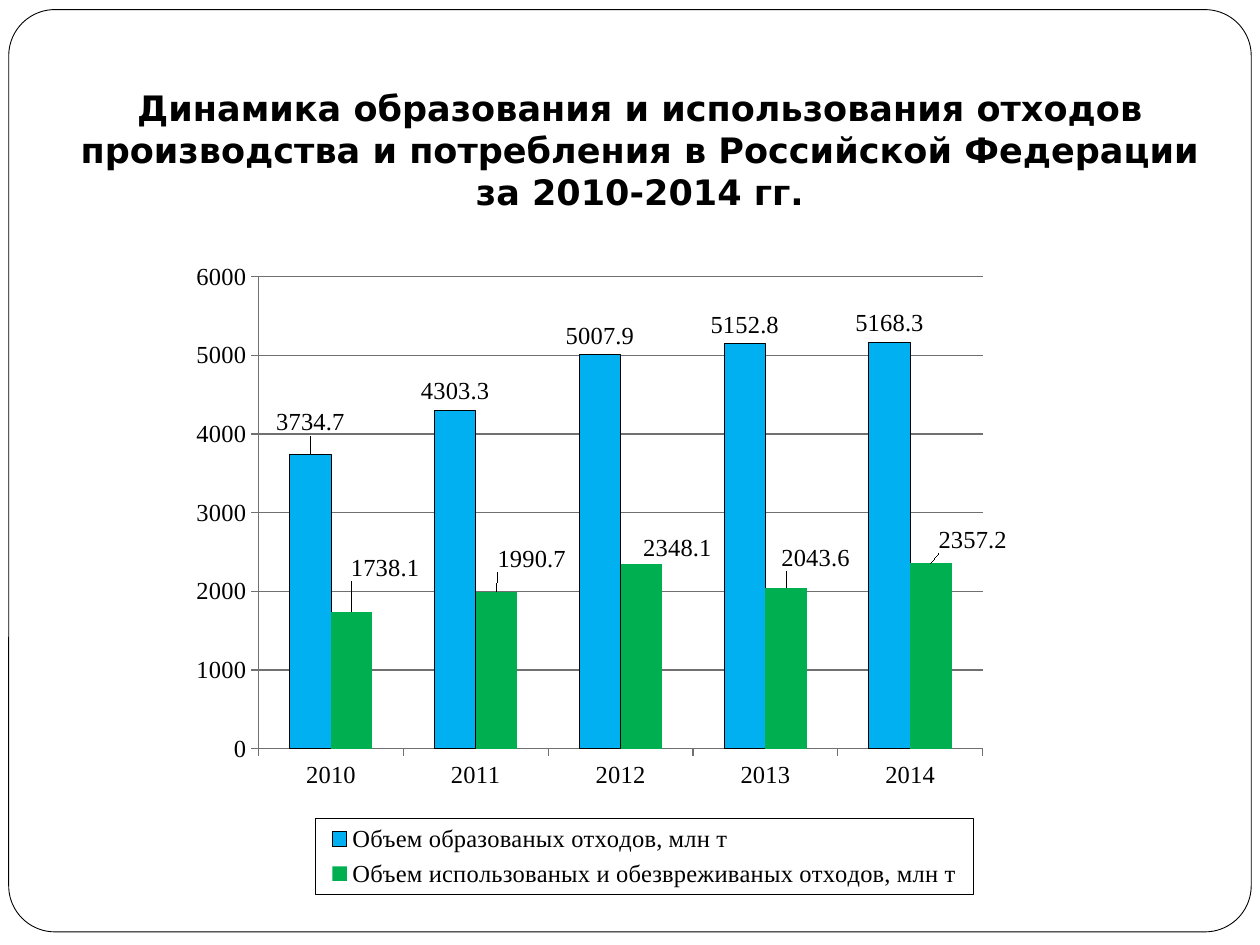
import pptx
import pptx.chart.data
import pptx.dml.color
import pptx.enum.chart
import pptx.enum.shapes
import pptx.enum.text
import pptx.oxml
import pptx.oxml.ns
import pptx.util

Pt = pptx.util.Pt
RGBColor = pptx.dml.color.RGBColor
xl = pptx.enum.chart

# Content
TITLE = ("Динамика образования и использования отходов производства "
         "и потребления в Российской Федерации за 2010-2014 гг.")
YEARS = ["2010", "2011", "2012", "2013", "2014"]
BLACK = RGBColor(0x00, 0x00, 0x00)
WHITE = RGBColor(0xFF, 0xFF, 0xFF)
GREY = RGBColor(0x70, 0x70, 0x70)
BLUE = RGBColor(0x00, 0xB0, 0xF0)
GREEN = RGBColor(0x00, 0xB0, 0x50)
# Label shifts are in percent of the chart's width and height, by year index
WASTE = [
    dict(name="Объем образованых отходов, млн т", color=BLUE, outline=BLACK,
         values=[3734.7, 4303.3, 5007.9, 5152.8, 5168.3],
         shifts={0: (0, -2)}),
    dict(name="Объем использованых и обезвреживаных отходов, млн т",
         color=GREEN, outline=None,
         values=[1738.1, 1990.7, 2348.1, 2043.6, 2357.2],
         shifts={0: (3.5, -3.7), 1: (3.7, -2.1), 2: (3.8, 0.4),
                 3: (3.1, -1.6), 4: (4.4, -0.7)}),
]
# Left, top, width, height as fractions of the chart
PLOT_AREA = (0.11, 0.09, 0.76, 0.68)
LEGEND_AREA = (0.17, 0.87, 0.69, 0.11)
TITLE_FONT, CHART_FONT = "DejaVu Sans", "Times New Roman"


def layout_xml(**parts):
    """A manual layout; parts are its settings in schema order."""
    settings = "".join(f'<c:{tag} val="{value}"/>' for tag, value in parts.items())
    return pptx.oxml.parse_xml(
        f'<c:layout {pptx.oxml.ns.nsdecls("c")}><c:manualLayout>'
        f'{settings}</c:manualLayout></c:layout>')


def put_layout(parent, layout, after=None):
    """Replace the layout of a chart part, behind the child named in after."""
    for old in parent.xpath("c:layout"):
        parent.remove(old)
    if after:
        parent.xpath(after)[0].addnext(layout)
    else:
        parent.insert(0, layout)


def area_layout(area, **first):
    return layout_xml(**first, xMode="edge", yMode="edge",
                      **dict(zip("xywh", area)))


def set_font(font, size):
    font.name, font.size, font.bold = CHART_FONT, Pt(size), False
    font.color.rgb = BLACK


presentation = pptx.Presentation()
presentation.slide_width, presentation.slide_height = Pt(720), Pt(540)
slide = presentation.slides.add_slide(presentation.slide_layouts[5])
title = slide.shapes.title

# Rounded frame, behind everything
frame = slide.shapes.add_shape(pptx.enum.shapes.MSO_SHAPE.ROUNDED_RECTANGLE,
                               Pt(5), Pt(5.5), Pt(710), Pt(527))
frame.adjustments[0] = 0.05
frame.shadow.inherit = False
frame.fill.solid()
frame.fill.fore_color.rgb = WHITE
frame.line.color.rgb = BLACK
frame.line.width = Pt(0.5)
title.element.addprevious(frame.element)

# Title
title.left, title.top, title.width, title.height = Pt(42.5), Pt(49), Pt(646.5), Pt(72.7)
text = title.text_frame
text.margin_left = text.margin_top = text.margin_right = text.margin_bottom = 0
text.word_wrap = True
text.auto_size = pptx.enum.text.MSO_AUTO_SIZE.SHAPE_TO_FIT_TEXT
text.vertical_anchor = pptx.enum.text.MSO_ANCHOR.MIDDLE
heading = text.paragraphs[0]
heading.alignment = pptx.enum.text.PP_ALIGN.CENTER
run = heading.add_run()
run.text = TITLE
run.font.name, run.font.size, run.font.bold = TITLE_FONT, Pt(20), True
run.font.color.rgb = BLACK

# Chart
data = pptx.chart.data.CategoryChartData()
data.categories = YEARS
for waste in WASTE:
    data.add_series(waste["name"], waste["values"])
chart = slide.shapes.add_chart(xl.XL_CHART_TYPE.COLUMN_CLUSTERED, Pt(88), Pt(122.4),
                               Pt(544.3), Pt(396.7), data).chart
chart.has_title = False
set_font(chart.font, 10)
plot = chart.plots[0]
plot.gap_width, plot.overlap, plot.vary_by_categories = 150, 0, False

# Axes
for axis in (chart.category_axis, chart.value_axis):
    set_font(axis.tick_labels.font, 14)
    axis.major_tick_mark = xl.XL_TICK_MARK.OUTSIDE
    axis.format.line.color.rgb = GREY
    axis.format.line.width = Pt(0.75)
amounts = chart.value_axis
amounts.minimum_scale, amounts.maximum_scale, amounts.major_unit = 0, 6000, 1000
amounts.has_major_gridlines = True
amounts.major_gridlines.format.line.color.rgb = GREY
amounts.major_gridlines.format.line.width = Pt(0.75)

# Columns and their labels
for waste, columns in zip(WASTE, plot.series):
    columns.format.fill.solid()
    columns.format.fill.fore_color.rgb = waste["color"]
    if waste["outline"] is None:
        columns.format.line.fill.background()
    else:
        columns.format.line.color.rgb = waste["outline"]
        columns.format.line.width = Pt(0.5)
    labels = columns.data_labels
    labels.show_value = True
    labels.position = xl.XL_LABEL_POSITION.OUTSIDE_END
    set_font(labels.font, 14)
    for year in waste["shifts"]:
        label = columns.points[year].data_label
        set_font(label.font, 14)
        label.position = xl.XL_LABEL_POSITION.OUTSIDE_END

for waste, columns_xml in zip(WASTE, chart.element.xpath("//c:ser")):
    moved = columns_xml.xpath("c:dLbls/c:dLbl")
    for label_xml, (right, down) in zip(moved, waste["shifts"].values()):
        put_layout(label_xml, layout_xml(x=right / 100, y=down / 100), after="c:idx")

# Legend with a thin border
chart.has_legend = True
chart.legend.position = xl.XL_LEGEND_POSITION.BOTTOM
chart.legend.include_in_layout = False
set_font(chart.legend.font, 14)
legend_xml = chart.element.xpath("//c:legend")[0]
put_layout(legend_xml, area_layout(LEGEND_AREA), after="c:legendPos")
legend_xml.xpath("c:txPr")[0].addprevious(pptx.oxml.parse_xml(
    f'<c:spPr {pptx.oxml.ns.nsdecls("c", "a")}><a:noFill/><a:ln w="6350"><a:solidFill>'
    f'<a:srgbClr val="{BLACK}"/></a:solidFill></a:ln></c:spPr>'))
put_layout(chart.element.xpath("//c:plotArea")[0],
           area_layout(PLOT_AREA, layoutTarget="inner"))

presentation.save("out.pptx")
